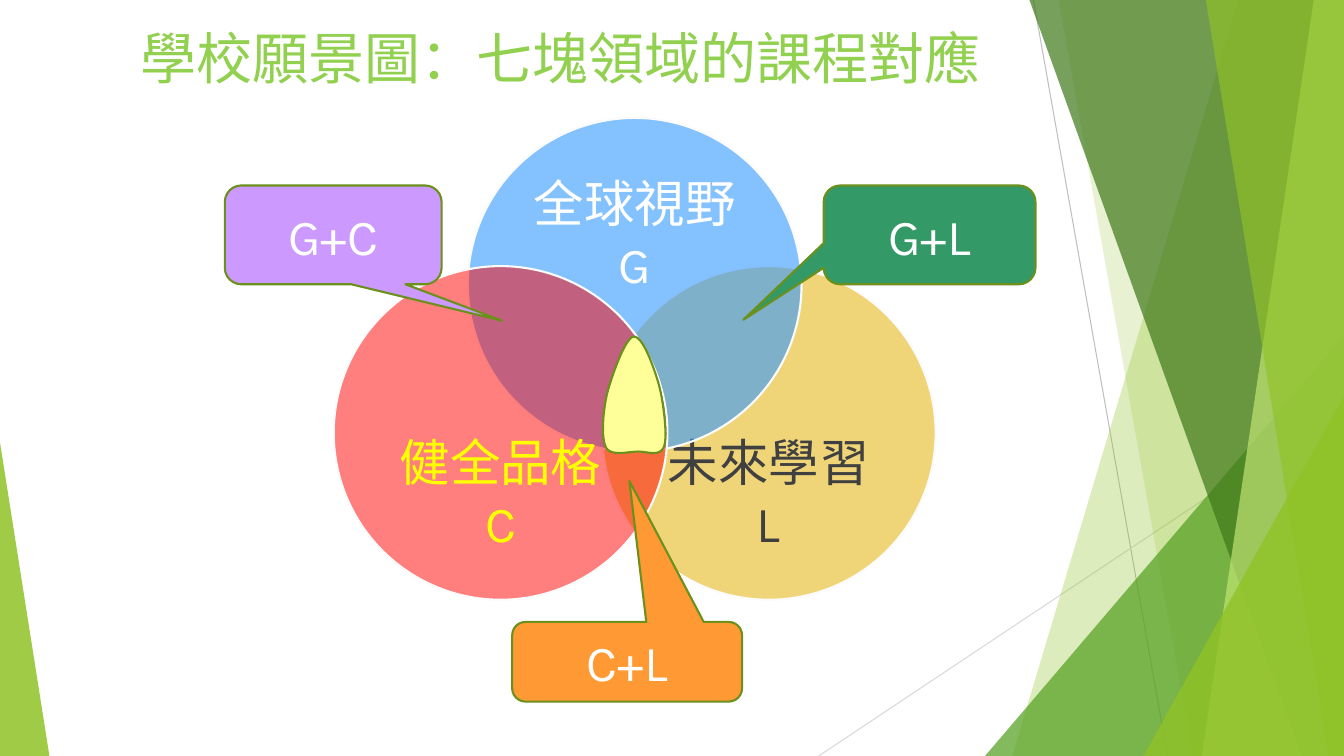
from dataclasses import dataclass

from lxml.etree import SubElement
from pptx import Presentation
from pptx.dml.color import RGBColor
from pptx.enum.shapes import MSO_CONNECTOR, MSO_SHAPE
from pptx.enum.text import MSO_ANCHOR, PP_ALIGN
from pptx.oxml.ns import qn
from pptx.util import Inches, Pt

SLIDE_WIDTH, SLIDE_HEIGHT = 13.33, 7.5
FONT = "Karla"
GREEN, OUTLINE, WHITE = "90C226", "6B901C", "FFFFFF"


@dataclass
class Ray:
    start: tuple[float, float]
    end: tuple[float, float]
    color: str


@dataclass
class Band:
    """Full-height strip from its left edge to the right side of the slide."""
    top_left: float
    bottom_left: float
    color: str
    opacity: int


@dataclass
class Wedge:
    left: float
    top: float
    width: float
    apex: float
    color: str
    opacity: int


@dataclass
class Circle:
    left: float
    top: float
    lines: list[str]
    text_color: str
    color: str
    opacity: int
    margins: dict[str, float]


@dataclass
class Callout:
    label: str
    box: tuple[float, float, float, float]
    tip: tuple[float, float]
    color: str


BACKDROP = [
    Ray((10.25, 0), (11.58, 7.5), "BFBFBF"),
    Ray((13.33, 4.03), (8.12, 7.5), "D9D9D9"),
    Band(12.28, 10.04, GREEN, 30),
    Band(10.5, 11.83, GREEN, 20),
    Wedge(9.77, 3.33, 3.56, 1, "54A021", 72),
    Band(10.21, 12.91, "3F7819", 70),
    Band(13.03, 11.92, "C0E474", 70),
    Band(11.96, 13.18, GREEN, 65),
    Wedge(11.34, 3.93, 1.99, 1, GREEN, 80),
    Wedge(0, 4.39, 0.49, 0, GREEN, 85),
]

DIAMETER = 3.31
LOW_TEXT = {"margin_top": 1.22}
HIGH_TEXT = {"margin_bottom": 1.08}
CIRCLES = [
    Circle(5.97, 2.64, ["未來學習", "L"], "404040", "F0D578", 100, LOW_TEXT),
    Circle(4.64, 1.17, ["全球視野", "G"], WHITE, "3399FF", 60, HIGH_TEXT),
    Circle(3.31, 2.64, ["健全品格", "C"], "FFFF00", "FF0000", 50, LOW_TEXT),
]

CALLOUTS = [
    Callout("G+C", (2.23, 1.84, 2.15, 0.98), (0.78, 0.87), "CC99FF"),
    Callout("G+L", (8.17, 1.84, 2.1, 0.98), (-0.88, 0.86), "339966"),
    Callout("C+L", (5.08, 6.17, 2.28, 0.79), (0.01, -2.27), "FF9933"),
]

# Each curve: two control points and an end point
CENTER_START = (6.28, 3.34)
CENTER_CURVES = [
    ((6.2, 3.36), (6.07, 3.72), (6.02, 3.91)),
    ((5.98, 4.09), (5.96, 4.34), (6.01, 4.44)),
    ((6.06, 4.53), (6.23, 4.48), (6.33, 4.48)),
    ((6.43, 4.48), (6.55, 4.54), (6.59, 4.42)),
    ((6.62, 4.31), (6.58, 3.97), (6.53, 3.8)),
    ((6.48, 3.63), (6.37, 3.32), CENTER_START),
]


def rgb(color: str) -> RGBColor:
    return RGBColor.from_string(color)


def paint(shape, color: str, opacity: int = 100, outline: str = "") -> None:
    shape.shadow.inherit = False
    shape.fill.solid()
    shape.fill.fore_color.rgb = rgb(color)
    if opacity < 100:
        color_element = shape._element.spPr.find(qn("a:solidFill"))[0]
        SubElement(color_element, qn("a:alpha"), val=str(opacity * 1000))
    if outline:
        shape.line.color.rgb = rgb(outline)
        shape.line.width = Pt(1.5)
    else:
        shape.line.fill.background()


def write(shape, lines: list[str], size: int, color: str, **margins: float) -> None:
    frame = shape.text_frame
    frame.text = "\n".join(lines)
    frame_format = {"word_wrap": True, "vertical_anchor": MSO_ANCHOR.MIDDLE}
    frame_format |= {side: Inches(margin) for side, margin in margins.items()}
    for name, value in frame_format.items():
        setattr(frame, name, value)
    for paragraph in frame.paragraphs:
        paragraph.alignment = PP_ALIGN.CENTER
        for name, value in {"name": FONT, "size": Pt(size)}.items():
            setattr(paragraph.runs[0].font, name, value)
        paragraph.runs[0].font.color.rgb = rgb(color)


def add_preset(slide, preset: MSO_SHAPE, *box: float):
    return slide.shapes.add_shape(preset, *map(Inches, box))


def add_outline(slide, points: list[tuple[float, float]]):
    corners = [(Inches(x), Inches(y)) for x, y in points]
    builder = slide.shapes.build_freeform(*corners[0])
    builder.add_line_segments(corners[1:], close=True)
    return builder.convert_to_shape()


def draw_ray(slide, ray: Ray) -> None:
    ends = map(Inches, ray.start + ray.end)
    connector = slide.shapes.add_connector(MSO_CONNECTOR.STRAIGHT, *ends)
    connector.line.color.rgb = rgb(ray.color)
    connector.line.width = Pt(0.75)
    SubElement(connector._element.spPr, qn("a:effectLst"))


def draw_band(slide, band: Band) -> None:
    points = [(band.top_left, 0), (SLIDE_WIDTH, 0),
              (SLIDE_WIDTH, SLIDE_HEIGHT), (band.bottom_left, SLIDE_HEIGHT)]
    paint(add_outline(slide, points), band.color, band.opacity)


def draw_wedge(slide, wedge: Wedge) -> None:
    shape = add_preset(slide, MSO_SHAPE.ISOSCELES_TRIANGLE, wedge.left, wedge.top,
                       wedge.width, SLIDE_HEIGHT - wedge.top)
    shape.adjustments[0] = wedge.apex
    paint(shape, wedge.color, wedge.opacity)


def draw_circle(slide, circle: Circle) -> None:
    shape = add_preset(slide, MSO_SHAPE.OVAL, circle.left, circle.top, DIAMETER, DIAMETER)
    paint(shape, circle.color, circle.opacity, "FBFBFB")
    write(shape, circle.lines, 36, circle.text_color, **circle.margins)


def draw_callout(slide, callout: Callout) -> None:
    shape = add_preset(slide, MSO_SHAPE.ROUNDED_RECTANGULAR_CALLOUT, *callout.box)
    shape.adjustments[0], shape.adjustments[1] = callout.tip
    paint(shape, callout.color, outline=OUTLINE)
    write(shape, [callout.label], 36, WHITE)


def draw_center(slide, steps: int = 12) -> None:
    points = [CENTER_START]
    for first, second, end in CENTER_CURVES:
        start = points[-1]
        for step in range(1, steps + 1):
            t = step / steps
            weights = ((1 - t) ** 3, 3 * t * (1 - t) ** 2, 3 * t ** 2 * (1 - t), t ** 3)
            anchors = (start, first, second, end)
            points.append(tuple(sum(weight * anchor[axis] for weight, anchor
                                    in zip(weights, anchors)) for axis in (0, 1)))
    paint(add_outline(slide, points), "FFFF99", outline=OUTLINE)


def main() -> None:
    presentation = Presentation()
    presentation.slide_width = Inches(SLIDE_WIDTH)
    presentation.slide_height = Inches(SLIDE_HEIGHT)
    slide = presentation.slides.add_slide(presentation.slide_layouts[5])

    # Title
    title = slide.shapes.title
    for name, value in {"left": 0.99, "top": 0.18, "width": 9.14, "height": 0.77}.items():
        setattr(title, name, Inches(value))
    write(title, ["學校願景圖：七塊領域的課程對應"], 40, "92D050")

    # Backdrop, circles and callouts, from back to front
    painters = {Ray: draw_ray, Band: draw_band, Wedge: draw_wedge,
                Circle: draw_circle, Callout: draw_callout}
    for element in BACKDROP + CIRCLES + CALLOUTS:
        painters[type(element)](slide, element)
    draw_center(slide)

    presentation.save("out.pptx")


if __name__ == "__main__":
    main()
